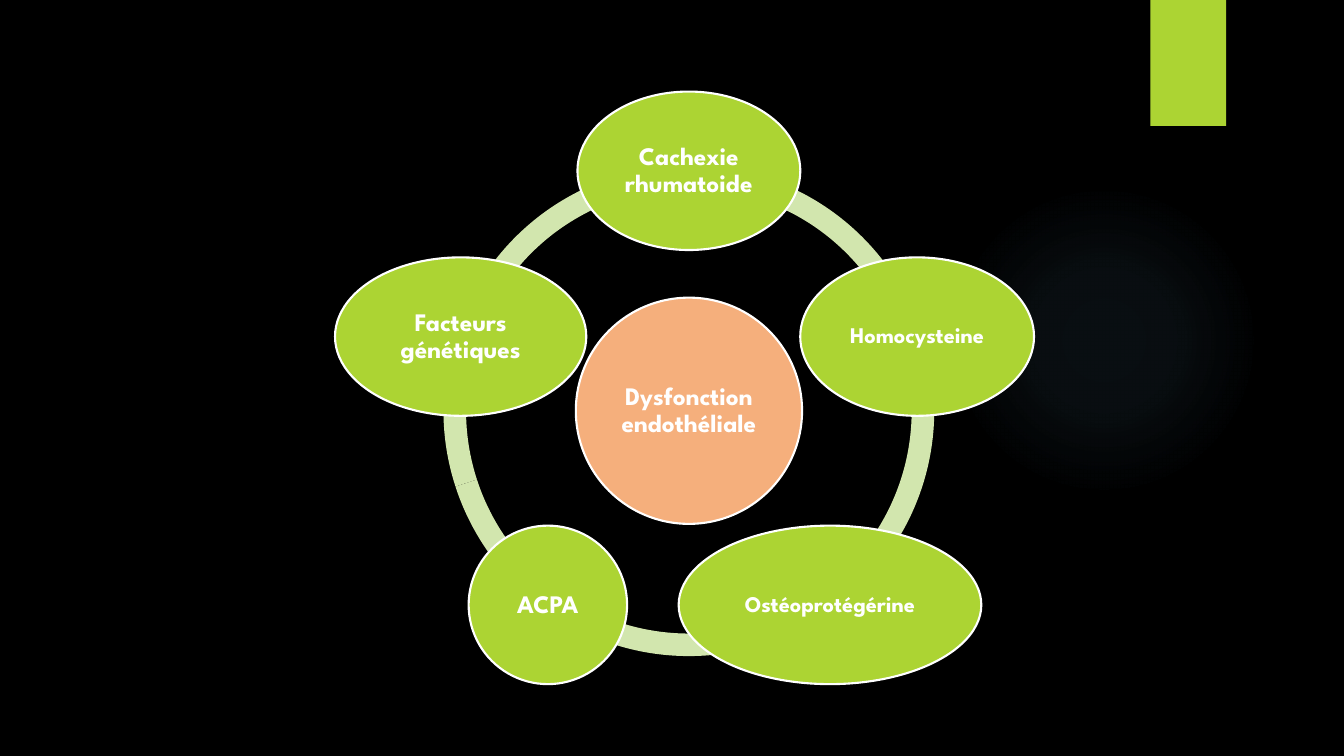
import math
from lxml import etree
from pptx import Presentation
from pptx.dml.color import RGBColor
from pptx.enum.shapes import MSO_SHAPE
from pptx.enum.text import MSO_ANCHOR, PP_ALIGN
from pptx.oxml import parse_xml
from pptx.oxml.ns import nsdecls, qn
from pptx.util import Pt

OVAL = MSO_SHAPE.OVAL
RECTANGLE = MSO_SHAPE.RECTANGLE
BLOCK_ARC = MSO_SHAPE.BLOCK_ARC
MIDDLE = MSO_ANCHOR.MIDDLE
CENTER = PP_ALIGN.CENTER
BLACK = RGBColor(0x00, 0x00, 0x00)
WHITE = RGBColor(0xFF, 0xFF, 0xFF)
GREEN = RGBColor(0xAC, 0xD4, 0x33)
PALE_GREEN = RGBColor(0xD2, 0xE6, 0xAE)
ORANGE = RGBColor(0xF5, 0xAF, 0x7C)
GLOW_BLUE = RGBColor(0x7A, 0xC4, 0xF0)

CENTER_X, CENTER_Y = 492.1, 293.4
ORBIT = 171.4
RING_SIZE = 350.6
FACTOR_HEIGHT = 113.2

prs = Presentation()
prs.slide_width, prs.slide_height = Pt(960), Pt(540)
slide = prs.slides.add_slide(prs.slide_layouts[6])
slide.background.fill.solid()
slide.background.fill.fore_color.rgb = BLACK


def add_plain(kind, left, top, width, height, color):
    shape = slide.shapes.add_shape(kind, Pt(left), Pt(top), Pt(width), Pt(height))
    shape.shadow.inherit = False
    shape.fill.solid()
    shape.fill.fore_color.rgb = color
    shape.line.fill.background()
    return shape


def add_bubble(label, x, y, width, height, size, color):
    bubble = add_plain(OVAL, x - width / 2, y - height / 2, width, height, color)
    bubble.line.color.rgb = WHITE
    bubble.line.width = Pt(1.5)
    frame = bubble.text_frame
    frame.word_wrap = True
    frame.vertical_anchor = MIDDLE
    frame.margin_left = frame.margin_right = Pt(2)
    frame.margin_top = frame.margin_bottom = Pt(2)
    paragraph = frame.paragraphs[0]
    paragraph.text = label
    paragraph.alignment = CENTER
    paragraph.line_spacing = 0.9
    paragraph.font.name = "League Spartan"
    paragraph.font.size = Pt(size)
    paragraph.font.bold = True
    paragraph.font.color.rgb = WHITE


glow = add_plain(OVAL, 677.5, 131.8, 221.8, 221.8, GLOW_BLUE)
gradient = parse_xml(f'<a:gradFill {nsdecls("a")} rotWithShape="1"><a:gsLst/></a:gradFill>')
for position, opacity in [(0, 7), (36, 6), (69, 0)]:
    stop = etree.SubElement(gradient[0], qn("a:gs"), pos=str(position * 1000))
    tint = etree.SubElement(stop, qn("a:srgbClr"), val=str(GLOW_BLUE))
    etree.SubElement(tint, qn("a:alpha"), val=str(opacity * 1000))
circle = etree.SubElement(gradient, qn("a:path"))
circle.set("path", "circle")
etree.SubElement(circle, qn("a:fillToRect"), l="50000", t="50000", r="50000", b="50000")
glow_properties = glow.element.spPr
glow_properties.replace(glow_properties.find(qn("a:solidFill")), gradient)

add_plain(RECTANGLE, 821.8, 0, 54, 90, GREEN)

arc_angles = [32.4 + 43.2 * i for i in range(5)]
for start, end in zip(arc_angles, arc_angles[1:] + arc_angles[:1]):
    arc = add_plain(BLOCK_ARC, CENTER_X - RING_SIZE / 2, CENTER_Y - RING_SIZE / 2,
                    RING_SIZE, RING_SIZE, PALE_GREEN)
    arc.adjustments[0] = start * 0.6
    arc.adjustments[1] = end * 0.6
    arc.adjustments[2] = 0.046

add_bubble("Dysfonction endothéliale", CENTER_X, CENTER_Y, 161.6, 161.6, 18, ORANGE)

factors = [
    ("Cachexie rhumatoide", 159.2, 18),
    ("Homocysteine", 167, 16),
    ("Ostéoprotégérine", 216.2, 16),
    ("ACPA", 113.2, 18),
    ("Facteurs génétiques", 179.5, 18),
]
for i, (label, width, size) in enumerate(factors):
    angle = math.radians(-90 + 360 / len(factors) * i)
    add_bubble(label, CENTER_X + ORBIT * math.cos(angle), CENTER_Y + ORBIT * math.sin(angle),
               width, FACTOR_HEIGHT, size, GREEN)

prs.save("out.pptx")
